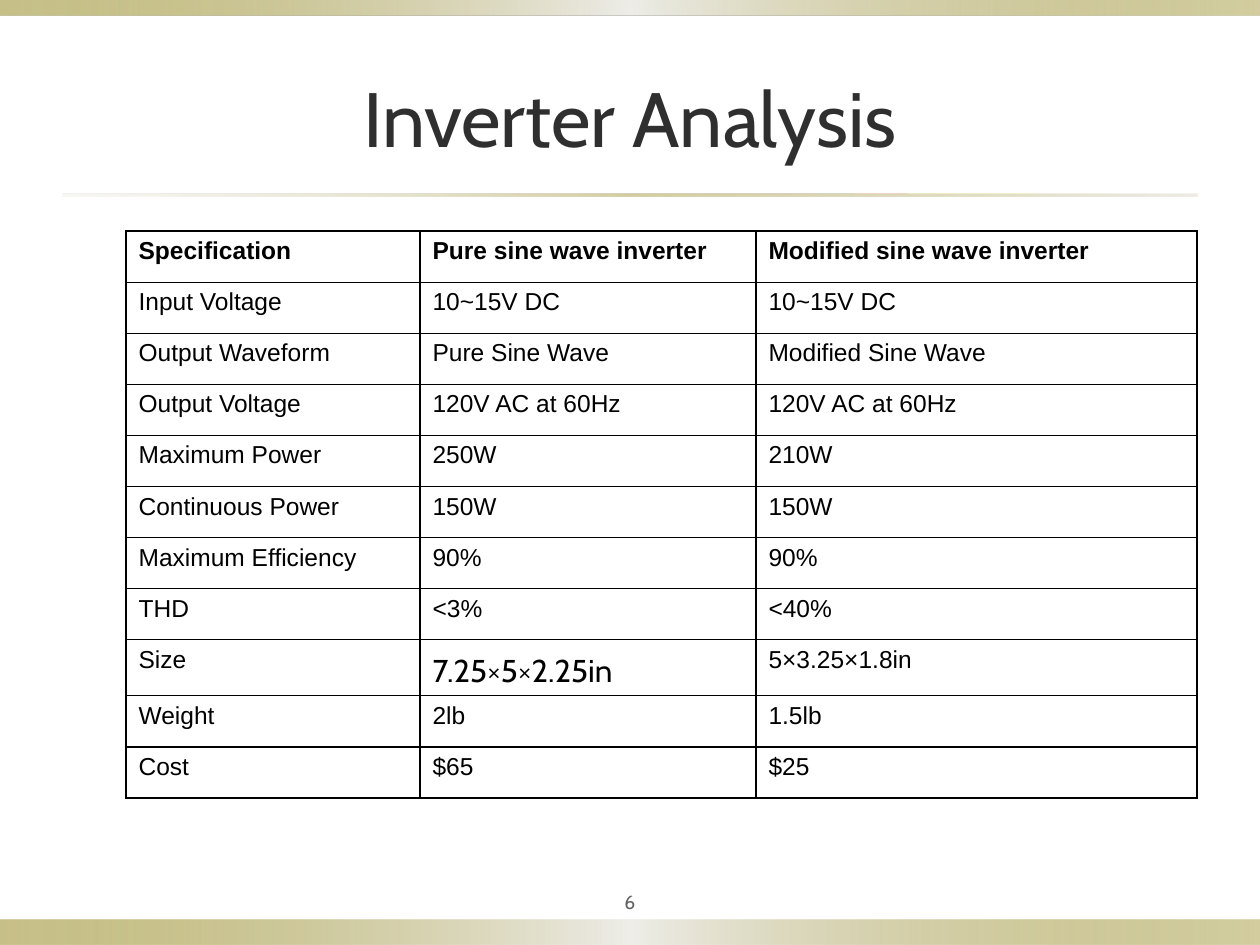
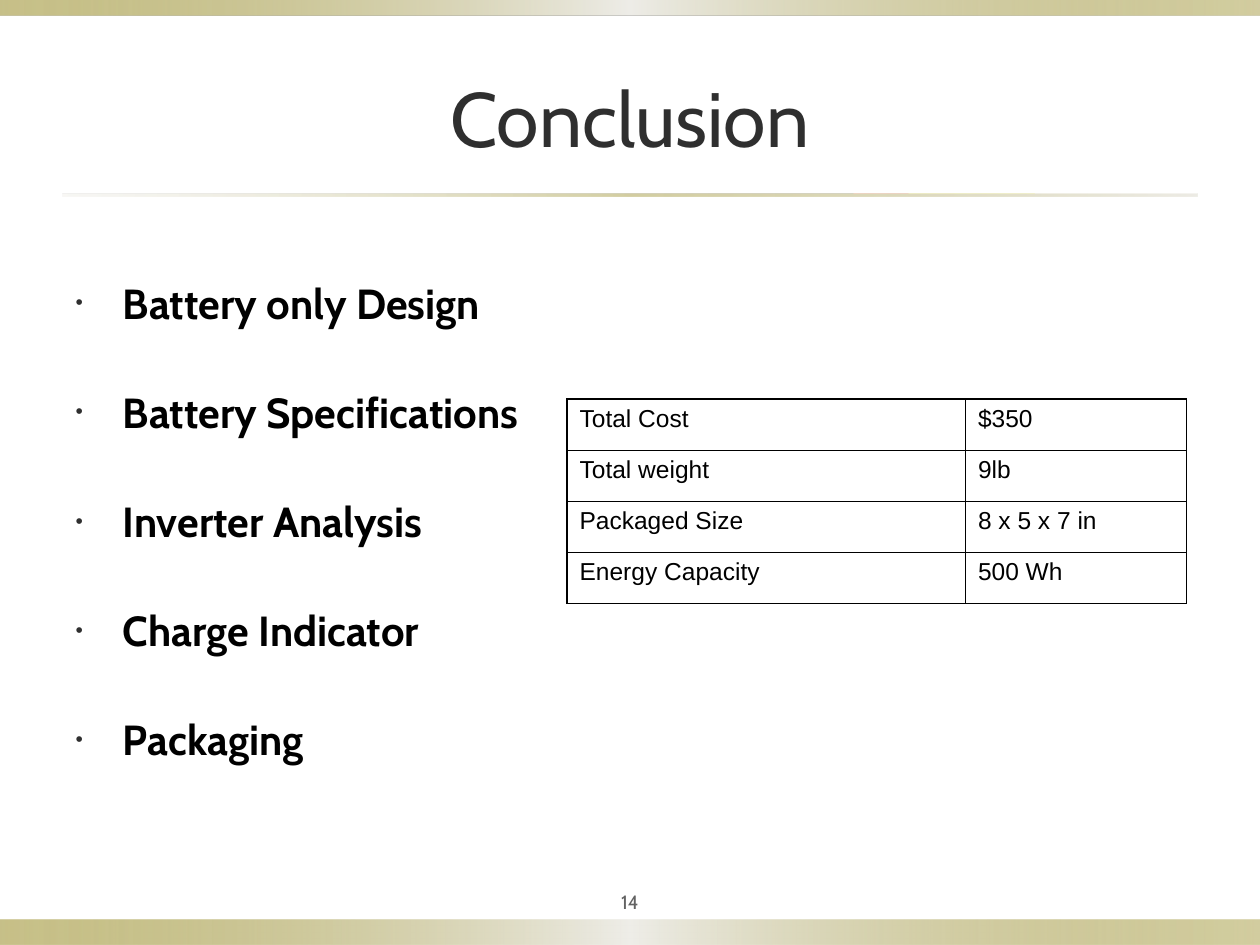
"""Build the inverter analysis and conclusion slides."""
from dataclasses import dataclass

from lxml.etree import SubElement
from pptx import Presentation
from pptx.dml.color import RGBColor
from pptx.enum.shapes import MSO_SHAPE as Preset
from pptx.enum.text import MSO_ANCHOR as Anchor, MSO_AUTO_SIZE as AutoSize, PP_ALIGN as Align
from pptx.oxml.ns import qn
from pptx.util import Pt


@dataclass(frozen=True)
class Theme:
    heading_font: str = "Cabin"
    table_font: str = "Arial"
    title_color: str = "2F2F2F"
    text_color: str = "000000"
    number_color: str = "636363"
    title_size: float = 44
    list_size: float = 24
    feature_size: float = 18
    table_size: float = 14
    number_size: float = 11
    border_width: float = 0.75
    row_height: float = 29.2
    band_stops: tuple = ((0, "918415", 50), (50, "EEEDE8", 100), (100, "918415", 40))
    rule_stops: tuple = ((0, "DCD9CC", 20), (50, "918415", 40), (100, "DCD9CC", 50))


THEME = Theme()
WIDTH, HEIGHT, MARGIN = 720, 540, 36
TITLE_BOX = (MARGIN, 21.6, WIDTH - 2 * MARGIN, 90)
LIST_BOX = (MARGIN, 126, WIDTH - 2 * MARGIN, 369)
NUMBER_BOX = (324, 504, 72, 22.3)
DECORATION = [
    ((0, 525.6, WIDTH, 14.4), THEME.band_stops),
    ((0, 0, WIDTH, 8.64), THEME.band_stops),
    ((MARGIN, 110.9, WIDTH - 2 * MARGIN, 1.5), THEME.rule_stops),
]

SPECIFICATIONS = [
    ("Specification", "Pure sine wave inverter", "Modified sine wave inverter"),
    ("Input Voltage", "10~15V DC", "10~15V DC"),
    ("Output Waveform", "Pure Sine Wave", "Modified Sine Wave"),
    ("Output Voltage", "120V AC at 60Hz", "120V AC at 60Hz"),
    ("Maximum Power", "250W", "210W"),
    ("Continuous Power", "150W", "150W"),
    ("Maximum Efficiency", "90%", "90%"),
    ("THD", "<3%", "<40%"),
    ("Size", "7.25×5×2.25in", "5×3.25×1.8in"),
    ("Weight", "2lb", "1.5lb"),
    ("Cost", "$65", "$25"),
]
FEATURED_CELL = (8, 1)
TOTALS = [
    ("Total Cost", "$350"),
    ("Total weight", "9lb"),
    ("Packaged Size", "8 x 5 x 7 in"),
    ("Energy Capacity", "500 Wh"),
]
SLIDES = [
    {
        "title": "Inverter Analysis", "number": 6, "topics": [],
        "table": {"rows": SPECIFICATIONS, "origin": (72, 132), "widths": (168, 192, 252),
                  "header": True, "featured": FEATURED_CELL},
    },
    {
        "title": "Conclusion", "number": 14,
        "topics": ["Battery only Design", "Battery Specifications", "Inverter Analysis",
                   "Charge Indicator", "Packaging"],
        "table": {"rows": TOTALS, "origin": (324, 228), "widths": (227.7, 126.3),
                  "header": False, "featured": None},
    },
]


def points(values):
    return [Pt(value) for value in values]


def place(shape, box):
    shape.left, shape.top, shape.width, shape.height = points(box)


def style(paragraph, font_name, size, color, bold=False):
    font = paragraph.font
    font.name, font.size, font.bold = font_name, Pt(size), bold
    font.color.rgb = RGBColor.from_string(color)


def add_gradient_bar(slide, box, stops):
    shape = slide.shapes.add_shape(Preset.RECTANGLE, *points(box))
    shape.shadow.inherit = False
    shape.line.fill.background()
    shape.fill.gradient()
    shape.fill.gradient_angle = 0
    stop_list = next(shape.element.iter(qn("a:gsLst")))
    for old_stop in list(stop_list):
        stop_list.remove(old_stop)
    for position, color, opacity in stops:
        stop = SubElement(stop_list, qn("a:gs"), pos=str(position * 1000))
        tint = SubElement(stop, qn("a:srgbClr"), val=color)
        SubElement(tint, qn("a:alpha"), val=str(opacity * 1000))


def add_title(slide, text):
    title = slide.shapes.title
    place(title, TITLE_BOX)
    frame = title.text_frame
    frame.text = text
    frame.vertical_anchor = Anchor.MIDDLE
    frame.auto_size = AutoSize.NONE
    paragraph = frame.paragraphs[0]
    paragraph.alignment = Align.CENTER
    style(paragraph, THEME.heading_font, THEME.title_size, THEME.title_color)


def add_number(slide, number):
    frame = slide.shapes.add_textbox(*points(NUMBER_BOX)).text_frame
    frame.text = str(number)
    frame.word_wrap = True
    frame.vertical_anchor = Anchor.MIDDLE
    frame.margin_left = frame.margin_right = frame.margin_top = frame.margin_bottom = Pt(3.6)
    paragraph = frame.paragraphs[0]
    paragraph.alignment = Align.CENTER
    style(paragraph, THEME.heading_font, THEME.number_size, THEME.number_color)


def add_topics(slide, topics):
    body = slide.placeholders[1]
    place(body, LIST_BOX)
    frame = body.text_frame
    frame.text = "\n".join(topics)
    frame.auto_size = AutoSize.NONE
    for paragraph in frame.paragraphs:
        paragraph.line_spacing = 2.0
        properties = paragraph._p.get_or_add_pPr()
        bullet_color = SubElement(properties, qn("a:buClr"))
        SubElement(bullet_color, qn("a:srgbClr"), val=THEME.title_color)
        SubElement(properties, qn("a:buSzPct"), val="50000")
        style(paragraph, THEME.heading_font, THEME.list_size, THEME.text_color, bold=True)


def add_borders(cell):
    properties = cell._tc.get_or_add_tcPr()
    for side in ("lnL", "lnR", "lnT", "lnB"):
        line = SubElement(properties, qn(f"a:{side}"), w=str(Pt(THEME.border_width)))
        fill = SubElement(line, qn("a:solidFill"))
        SubElement(fill, qn("a:srgbClr"), val=THEME.text_color)


def add_grid(slide, rows, origin, widths, header, featured):
    box = (*origin, sum(widths), THEME.row_height * len(rows))
    table = slide.shapes.add_table(len(rows), len(widths), *points(box)).table
    table.first_row = table.horz_banding = False
    for column, width in zip(table.columns, widths):
        column.width = Pt(width)
    for row_index, values in enumerate(rows):
        table.rows[row_index].height = Pt(THEME.row_height)
        for column_index, value in enumerate(values):
            cell = table.cell(row_index, column_index)
            cell.text = value
            add_borders(cell)
            cell.fill.background()
            paragraph = cell.text_frame.paragraphs[0]
            if (row_index, column_index) == featured:
                paragraph.line_spacing = 1.15
                style(paragraph, THEME.heading_font, THEME.feature_size, THEME.text_color)
            else:
                style(paragraph, THEME.table_font, THEME.table_size, THEME.text_color,
                      bold=header and row_index == 0)


def main():
    presentation = Presentation()
    presentation.slide_width, presentation.slide_height = Pt(WIDTH), Pt(HEIGHT)
    for content in SLIDES:
        layout_name = "Title and Content" if content["topics"] else "Title Only"
        slide = presentation.slides.add_slide(presentation.slide_layouts.get_by_name(layout_name))
        for box, stops in DECORATION:
            add_gradient_bar(slide, box, stops)
        add_title(slide, content["title"])
        add_number(slide, content["number"])
        if content["topics"]:
            add_topics(slide, content["topics"])
        add_grid(slide, **content["table"])
    presentation.save("out.pptx")


if __name__ == "__main__":
    main()
